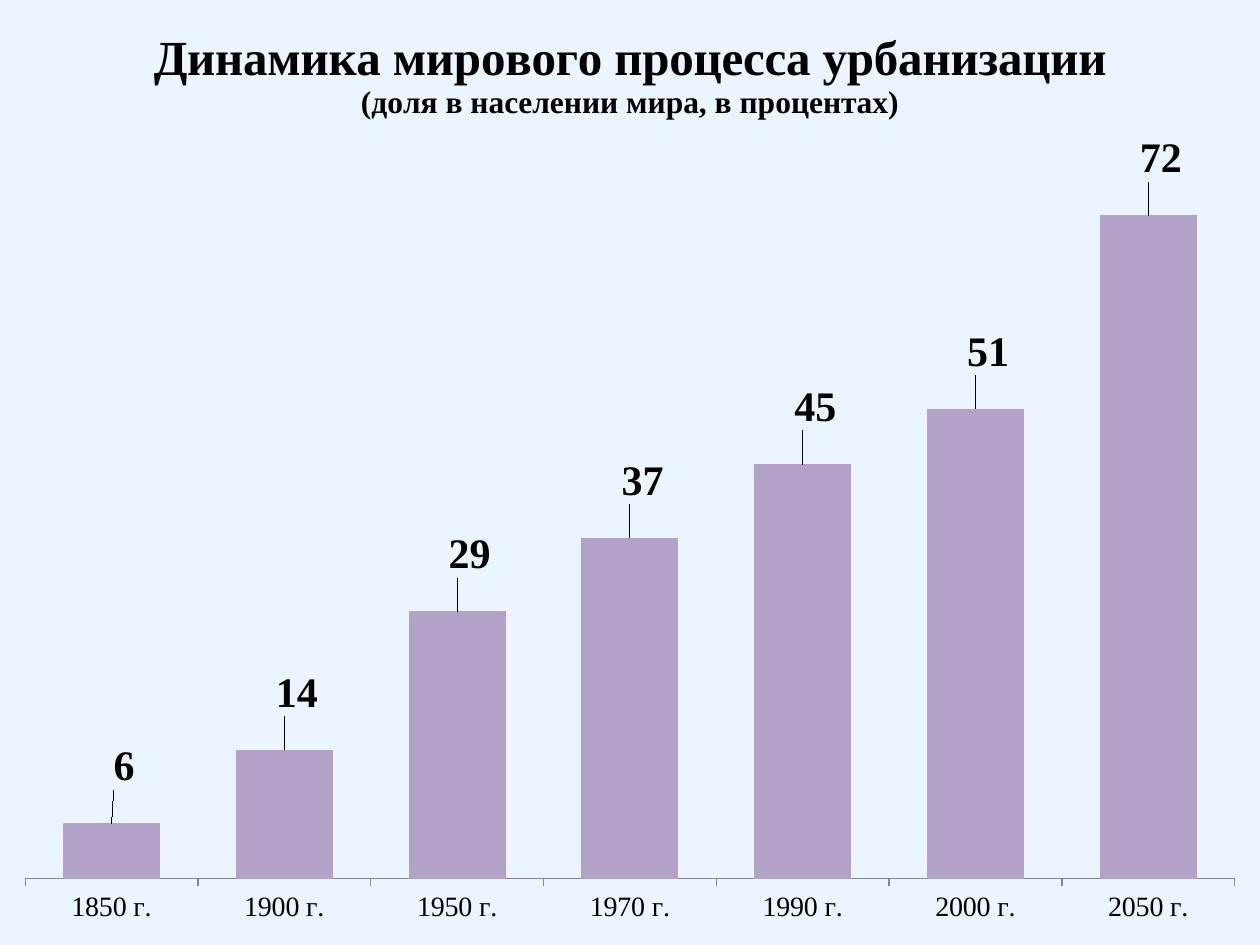
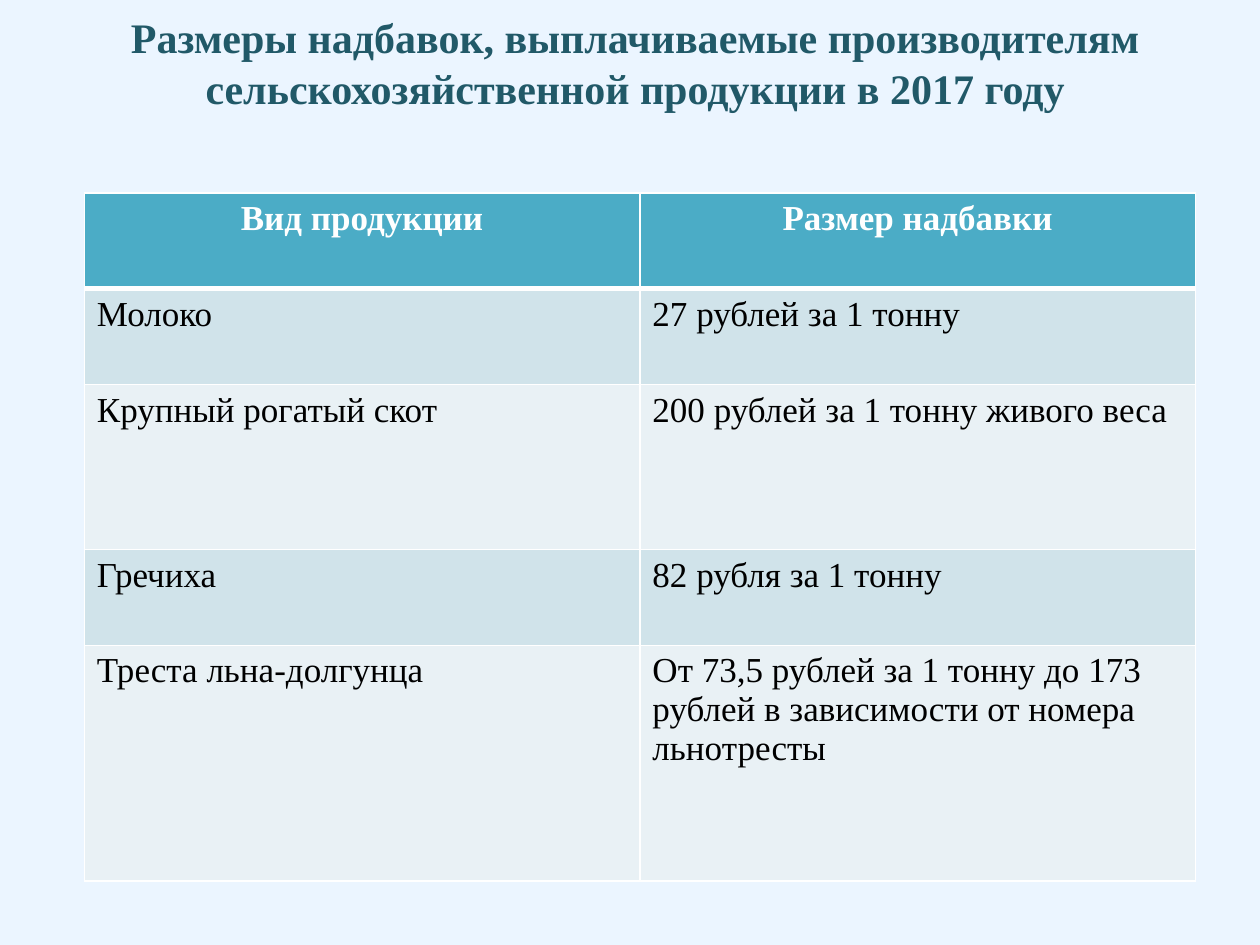
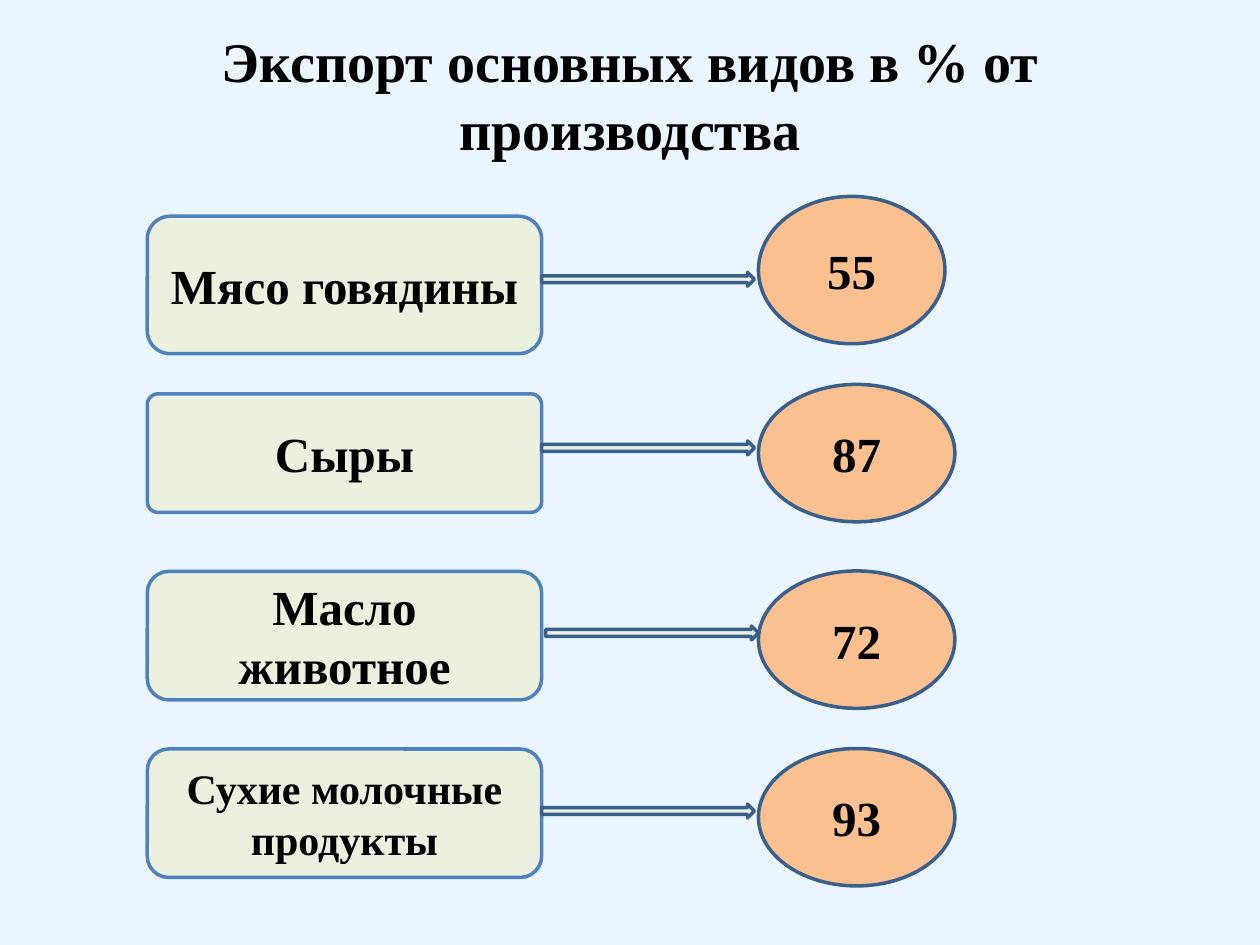
from lxml import etree
from pptx import Presentation
from pptx.chart.data import CategoryChartData
from pptx.dml.color import RGBColor
from pptx.enum.chart import XL_CHART_TYPE as CHART, XL_LABEL_POSITION as LABEL, XL_TICK_MARK as TICK
from pptx.enum.shapes import MSO_SHAPE as SHAPE
from pptx.enum.text import MSO_ANCHOR as ANCHOR, MSO_AUTO_SIZE as AUTO, PP_ALIGN as ALIGN
from pptx.oxml import parse_xml
from pptx.oxml.ns import nsdecls, qn
from pptx.util import Cm, Pt

FONT = "Times New Roman"
COLORS = {
    "background": "EBF5FF", "text": "000000", "white": "FFFFFF", "heading": "215968",
    "bar": "B3A2C7", "axis": "868686", "header": "4BACC6", "odd": "D0E3EA", "even": "E9F1F5",
    "box": "EBF1DE", "box line": "4F81BD", "oval": "FAC090", "oval line": "3A5F8C",
}

# Content
CHART_TITLE = [("Динамика мирового процесса урбанизации", 28),
               ("(доля в населении мира, в процентах)", 18)]
URBAN_SHARE = {"1850 г.": 6, "1900 г.": 14, "1950 г.": 29, "1970 г.": 37,
               "1990 г.": 45, "2000 г.": 51, "2050 г.": 72}
LABEL_SHIFT = (0.01, -0.03)
PLOT_AREA = {"x": 0.02, "y": 0.15, "w": 0.96, "h": 0.78}

BONUS_TITLE = ("Размеры надбавок, выплачиваемые производителям "
               "сельскохозяйственной продукции в 2017 году")
BONUSES = [
    ("Вид продукции", "Размер надбавки"),
    ("Молоко", "27 рублей за 1 тонну"),
    ("Крупный рогатый скот", "200 рублей за 1 тонну живого веса"),
    ("Гречиха", "82 рубля за 1 тонну"),
    ("Треста льна-долгунца", "От 73,5 рублей за 1 тонну до 173 рублей "
                             "в зависимости от номера льнотресты"),
]
ROW_HEIGHTS = [1.93, 1.93, 3.33, 1.93, 4.75]

EXPORT_TITLE = "Экспорт основных видов в % от производства"
# product, font size, box height, share, oval (top, width, height), arrow (left, top)
EXPORTS = [
    ("Мясо говядины", 28, 2.77, "55", (3.96, 3.76, 2.97), (10.92, 5.49)),
    ("Сыры", 28, 2.39, "87", (7.75, 3.96, 2.77), (10.92, 8.89)),
    ("Масло животное", 28, 2.59, "72", (11.51, 3.96, 2.77), (11, 12.62)),
    ("Сухие молочные продукты", 24, 2.59, "93", (15.09, 3.96, 2.77), (10.92, 16.21)),
]
BOX_LEFT, BOX_TOP, BOX_WIDTH, BOX_STEP = 2.97, 4.36, 7.95, 3.58
OVAL_LEFT = 15.29
ARROW_SIZE = (4.29, 0.28)


# Shared helpers
def rgb(name):
    return RGBColor.from_string(COLORS[name])


def set_font(font, size, color="text", bold=True):
    font.name, font.size, font.bold = FONT, Pt(size), bold
    font.color.rgb = rgb(color)


def write(tf, text, size, color="text", bold=True, align=ALIGN.CENTER):
    tf.word_wrap = True
    p = tf.paragraphs[0]
    p.text, p.alignment = text, align
    set_font(p.font, size, color, bold)


def add_titled_slide(prs, text, size, color, box):
    s = prs.slides.add_slide(prs.slide_layouts[5])
    title = s.shapes.title
    title.left, title.top, title.width, title.height = map(Cm, box)
    tf = title.text_frame
    tf.auto_size, tf.vertical_anchor = AUTO.NONE, ANCHOR.MIDDLE
    tf.margin_left = tf.margin_right = Cm(0.4)
    write(tf, text, size, color)
    return s


def add_figure(s, kind, box, fill, line, text="", size=28):
    sp = s.shapes.add_shape(kind, *map(Cm, box))
    sp.shadow.inherit = False
    sp.fill.solid()
    sp.fill.fore_color.rgb = rgb(fill)
    sp.line.color.rgb = rgb(line)
    sp.line.width = Pt(2)
    if text:
        sp.text_frame.vertical_anchor = ANCHOR.MIDDLE
        write(sp.text_frame, text, size)
    return sp


def manual_layout(inner=False, **values):
    modes = {"xMode": "edge", "yMode": "edge"} if inner else {}
    target = {"layoutTarget": "inner"} if inner else {}
    parts = {**target, **modes, **values}
    items = "".join(f'<c:{k} val="{v}"/>' for k, v in parts.items())
    return parse_xml(f'<c:layout {nsdecls("c")}><c:manualLayout>{items}'
                     '</c:manualLayout></c:layout>')


def set_border(cell, side, width):
    ln = etree.SubElement(cell._tc.get_or_add_tcPr(), qn(f"a:ln{side}"), w=str(Pt(width)))
    fill = etree.SubElement(ln, qn("a:solidFill"))
    etree.SubElement(fill, qn("a:srgbClr"), val=COLORS["white"])


# Slides
def add_urban_chart(prs):
    s = prs.slides.add_slide(prs.slide_layouts[6])
    data = CategoryChartData()
    data.categories = list(URBAN_SHARE)
    data.add_series(" ".join(t for t, _ in CHART_TITLE), list(URBAN_SHARE.values()))
    chart = s.shapes.add_chart(CHART.COLUMN_CLUSTERED, 0, 0, prs.slide_width,
                               prs.slide_height, data).chart
    chart.has_legend = False
    set_font(chart.font, 10, bold=False)

    tf = chart.chart_title.text_frame
    for i, (text, size) in enumerate(CHART_TITLE):
        p = tf.add_paragraph() if i else tf.paragraphs[0]
        r = p.add_run()
        r.text = text
        set_font(r.font, size)
    chart.chart_title.include_text_in_layout = False

    axis = chart.category_axis
    axis.major_tick_mark = TICK.OUTSIDE
    axis.format.line.color.rgb = rgb("axis")
    set_font(axis.tick_labels.font, 16, bold=False)
    values = chart.value_axis
    values.minimum_scale, values.maximum_scale = 0, 80
    values.has_major_gridlines = values.visible = False

    plot = chart.plots[0]
    plot.gap_width, plot.vary_by_categories = 78, False
    series = plot.series[0]
    series.format.fill.solid()
    series.format.fill.fore_color.rgb = rgb("bar")
    dx, dy = LABEL_SHIFT
    for i in range(len(URBAN_SHARE)):
        label = series.points[i].data_label
        set_font(label.font, 24)
        label.position = LABEL.OUTSIDE_END
    for idx in series._element.findall(f'{qn("c:dLbls")}/{qn("c:dLbl")}/{qn("c:idx")}'):
        idx.addnext(manual_layout(x=dx, y=dy))

    area = chart._chartSpace.find(f'{qn("c:chart")}/{qn("c:plotArea")}')
    for old in area.findall(qn("c:layout")):
        area.remove(old)
    area.insert(0, manual_layout(inner=True, **PLOT_AREA))


def add_bonus_table(prs):
    s = add_titled_slide(prs, BONUS_TITLE, 24, "heading", (1.3, 0.1, 23.01, 2.31))
    table = s.shapes.add_table(len(BONUSES), 2, Cm(1.7), Cm(3.89), Cm(22.4),
                               Cm(sum(ROW_HEIGHTS))).table
    for i, (texts, height) in enumerate(zip(BONUSES, ROW_HEIGHTS)):
        table.rows[i].height = Cm(height)
        header = i == 0
        fill = "header" if header else "odd" if i % 2 else "even"
        for cell, text in zip(table.rows[i].cells, texts):
            write(cell.text_frame, text, 20, "white" if header else "text", header,
                  ALIGN.CENTER if header else ALIGN.LEFT)
            for side in "LRTB":
                thick = (header and side == "B") or (i == 1 and side == "T")
                set_border(cell, side, 3 if thick else 1)
            cell.fill.solid()
            cell.fill.fore_color.rgb = rgb(fill)


def add_export_diagram(prs):
    s = add_titled_slide(prs, EXPORT_TITLE, 32, "text", (0.79, 0.7, 23.83, 2.39))
    for i, (product, size, height, share, oval, arrow) in enumerate(EXPORTS):
        box = (BOX_LEFT, BOX_TOP + i * BOX_STEP, BOX_WIDTH, height)
        sp = add_figure(s, SHAPE.ROUNDED_RECTANGLE, box, "box", "box line", product, size)
        if product == "Сыры":
            sp.adjustments[0] = 0.09
        add_figure(s, SHAPE.OVAL, (OVAL_LEFT, *oval), "oval", "oval line", share)
        add_figure(s, SHAPE.RIGHT_ARROW, (*arrow, *ARROW_SIZE), "box", "oval line")


def main():
    prs = Presentation()
    prs.slide_width, prs.slide_height = Cm(25.4), Cm(19.05)
    background = prs.slide_master.background.fill
    background.solid()
    background.fore_color.rgb = rgb("background")
    add_urban_chart(prs)
    add_bonus_table(prs)
    add_export_diagram(prs)
    prs.save("out.pptx")


if __name__ == "__main__":
    main()
